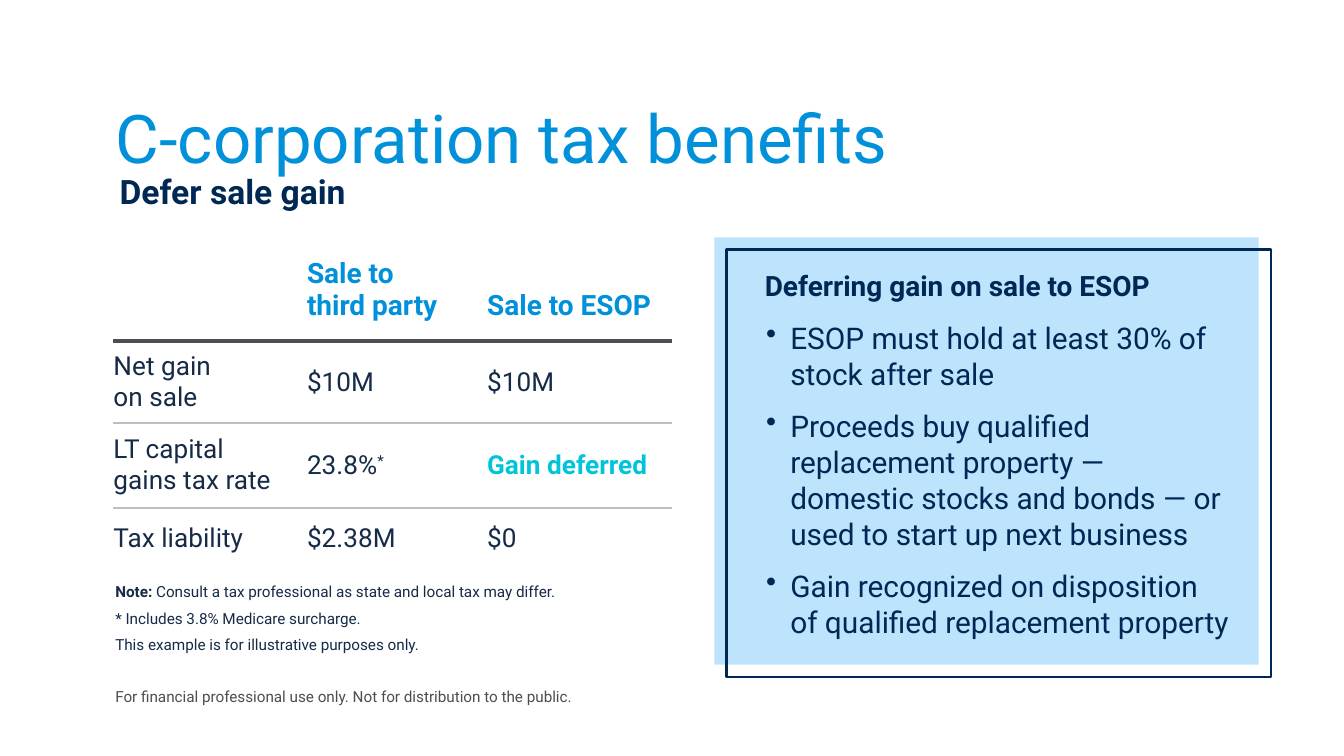
import pptx
import pptx.util
import pptx.dml.color
import pptx.enum.shapes
import pptx.enum.text
import pptx.oxml.ns
from lxml import etree

Pt = pptx.util.Pt
RGB = pptx.dml.color.RGBColor
ANCHOR = pptx.enum.text.MSO_ANCHOR
qn = pptx.oxml.ns.qn

BLUE = RGB(0x00, 0x91, 0xDA)
NAVY = RGB(0x00, 0x28, 0x55)
INK = RGB(0x16, 0x2B, 0x48)
CYAN = RGB(0x00, 0xC4, 0xD9)
PALE = RGB(0xBD, 0xE4, 0xFC)
GREY = RGB(0x4D, 0x4E, 0x53)
RULE = RGB(0xBF, 0xBF, 0xBF)
FONT = "Roboto"
NO_STYLE = "{2D5ABB26-0587-4C30-8999-92F81FD0307C}"

HEADINGS = ["", "Sale to\nthird party", "Sale to ESOP"]
ROWS = [
    ["Net gain\non sale", "$10M", "$10M"],
    ["LT capital\ngains tax rate", "23.8%*", "Gain deferred"],
    ["Tax liability", "$2.38M", "$0"],
]
BULLETS = [
    "ESOP must hold at least 30% of stock after sale",
    "Proceeds buy qualified replacement property — domestic stocks and bonds "
    "— or used to start up next business",
    "Gain recognized on disposition of qualified replacement property",
]


def add_run(p, text, size, color, bold=False):
    r = p.add_run()
    r.text = text
    r.font.name, r.font.size, r.font.bold = FONT, Pt(size), bold
    r.font.color.rgb = color
    return r


def next_paragraph(tf, i):
    return tf.add_paragraph() if i else tf.paragraphs[0]


def add_text_box(s, x, y, w, h, inset=None):
    tf = s.shapes.add_textbox(Pt(x), Pt(y), Pt(w), Pt(h)).text_frame
    tf.word_wrap = True
    if inset is not None:
        set_insets(tf, inset, inset, inset, inset)
    return tf


def set_insets(box, left, top, right, bottom):
    box.margin_left, box.margin_top = Pt(left), Pt(top)
    box.margin_right, box.margin_bottom = Pt(right), Pt(bottom)


def add_heading(s, x, y, w):
    sp = s.shapes.title
    sp.left, sp.top, sp.width, sp.height = Pt(x), Pt(y), Pt(w), Pt(47.5)
    tf = sp.text_frame
    tf.auto_size = pptx.enum.text.MSO_AUTO_SIZE.NONE
    tf.vertical_anchor = ANCHOR.TOP
    set_insets(tf, 5, 5, 5, 0)
    p = tf.paragraphs[0]
    p.alignment = pptx.enum.text.PP_ALIGN.LEFT
    add_run(p, "C-corporation tax benefits", 36, BLUE)
    tf = add_text_box(s, x, y + 41, 229, 39)
    add_run(tf.paragraphs[0], "Defer sale gain", 18, NAVY, True)


def set_border(cell, side, color, width):
    """Draw one cell edge; side is "lnT" or "lnB"."""
    ln = etree.SubElement(cell._tc.get_or_add_tcPr(), qn("a:" + side), w=str(Pt(width)))
    fill = etree.SubElement(ln, qn("a:solidFill"))
    etree.SubElement(fill, qn("a:srgbClr"), val=str(color))


def fill_header_cell(cell, text):
    cell.vertical_anchor = ANCHOR.BOTTOM
    set_insets(cell, 0, 0, 0, 10.8)
    for i, line in enumerate(text.split("\n")):
        p = next_paragraph(cell.text_frame, i)
        p.line_spacing = 0.8
        if i:
            p.space_before = Pt(3)
        if line:
            add_run(p, line, 15, BLUE, True)


def fill_body_cell(cell, text):
    cell.vertical_anchor = ANCHOR.MIDDLE
    set_insets(cell, 0, 0, 0, 0)
    p = cell.text_frame.paragraphs[0]
    deferred = text == "Gain deferred"
    for i, line in enumerate(text.split("\n")):
        if i:
            p.add_line_break()
        add_run(p, line.rstrip("*"), 14, CYAN if deferred else INK, deferred)
    if text.endswith("*"):
        r = add_run(p, "*", 14, INK)
        r._r.get_or_add_rPr().set("baseline", "30000")


def add_comparison_table(s, x, y):
    widths, heights = [103.7, 96.5, 98.8], [44.6, 43.9, 45.4, 33.1]
    table = s.shapes.add_table(len(heights), len(widths), Pt(x), Pt(y),
                               Pt(sum(widths)), Pt(sum(heights))).table
    table.first_row = table.horz_banding = False
    table._tbl.tblPr.find(qn("a:tableStyleId")).text = NO_STYLE
    for column, width in zip(table.columns, widths):
        column.width = Pt(width)
    rules = [(GREY, 2.25), (RULE, 1), (RULE, 1)]
    for i, texts in enumerate([HEADINGS] + ROWS):
        table.rows[i].height = Pt(heights[i])
        for j, text in enumerate(texts):
            cell = table.cell(i, j)
            if i > 0:
                set_border(cell, "lnT", *rules[i - 1])
            if i < len(rules):
                set_border(cell, "lnB", *rules[i])
            cell.fill.background()
            (fill_body_cell if i else fill_header_cell)(cell, text)


def add_panel_rectangle(s, x, y, fill=None, line=None):
    sp = s.shapes.add_shape(pptx.enum.shapes.MSO_SHAPE.RECTANGLE,
                            Pt(x), Pt(y), Pt(291.6), Pt(229))
    sp.shadow.inherit = False
    if fill is None:
        sp.fill.background()
    else:
        sp.fill.solid()
        sp.fill.fore_color.rgb = fill
    if line is None:
        sp.line.fill.background()
    else:
        sp.line.color.rgb = line
        sp.line.width = Pt(1.25)


def add_deferral_panel(s, x, y):
    add_panel_rectangle(s, x, y, fill=PALE)
    tf = add_text_box(s, x + 27, y + 17, 250.6, 195, 0)
    p = tf.paragraphs[0]
    p.space_after = Pt(9)
    add_run(p, "Deferring gain on sale to ESOP", 15, NAVY, True)
    for text in BULLETS:
        p = tf.add_paragraph()
        pPr = p._p.get_or_add_pPr()
        pPr.set("marL", str(Pt(13.7)))
        pPr.set("indent", str(Pt(-13)))
        etree.SubElement(pPr, qn("a:buChar"), char="•")
        p.space_after = Pt(9)
        add_run(p, text, 16, NAVY)
    add_panel_rectangle(s, x + 6.5, y + 6.5, line=NAVY)


def add_footnotes(s, x, y):
    tf = add_text_box(s, x, y, 540, 77)
    tf.vertical_anchor = ANCHOR.BOTTOM
    notes = [
        ("Consult a tax professional as state and local tax may differ.", INK, 0),
        ("* Includes 3.8% Medicare surcharge.", INK, 4.2),
        ("This example is for illustrative purposes only.", INK, 4.2),
        ("For financial professional use only. Not for distribution to the public.",
         GREY, 18.2),
    ]
    for i, (text, color, gap) in enumerate(notes):
        p = next_paragraph(tf, i)
        if i:
            p.space_before = Pt(gap)
        else:
            add_run(p, "Note: ", 8.2, color, True)
        add_run(p, text, 8.2, color)


def main():
    prs = pptx.Presentation()
    prs.slide_width, prs.slide_height = Pt(720), Pt(405)
    s = prs.slides.add_slide(prs.slide_layouts[5])
    add_heading(s, 57, 46.8, 617)
    add_comparison_table(s, 60.8, 138.2)
    add_deferral_panel(s, 382.7, 127.1)
    add_footnotes(s, 54.7, 304.6)
    prs.save("out.pptx")


if __name__ == "__main__":
    main()
